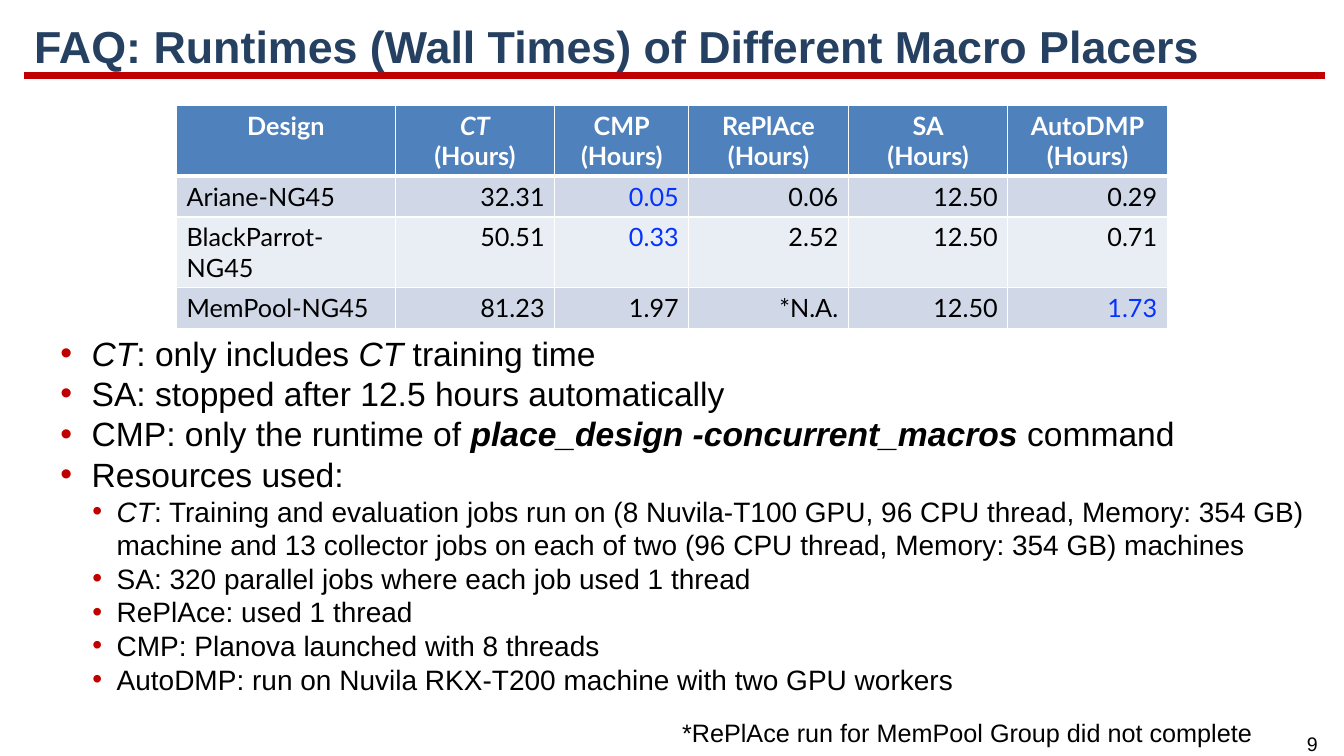
from lxml.etree import SubElement
from pptx import Presentation
from pptx.dml.color import RGBColor
from pptx.enum.shapes import MSO_CONNECTOR
from pptx.enum.text import MSO_ANCHOR, PP_ALIGN
from pptx.oxml.ns import qn
from pptx.util import Cm, Pt

RED = RGBColor(0xC0, 0x00, 0x00)
NAVY = RGBColor(0x25, 0x40, 0x61)
BLACK = RGBColor(0, 0, 0)
WHITE = RGBColor(0xFF, 0xFF, 0xFF)
BEST_BLUE = RGBColor(0x04, 0x32, 0xFF)
HEADER_FILL = RGBColor(0x4F, 0x81, 0xBD)
BAND_FILLS = (RGBColor(0xD0, 0xD8, 0xE8), RGBColor(0xE9, 0xED, 0xF4))

TITLE = "FAQ: Runtimes (Wall Times) of Different Macro Placers"
HEADERS = ["Design", "CT\n(Hours)", "CMP\n(Hours)", "RePlAce\n(Hours)",
           "SA\n(Hours)", "AutoDMP\n(Hours)"]
RUNTIMES = [
    ["Ariane-NG45", "32.31", "0.05", "0.06", "12.50", "0.29"],
    ["BlackParrot-NG45", "50.51", "0.33", "2.52", "12.50", "0.71"],
    ["MemPool-NG45", "81.23", "1.97", "*N.A.", "12.50", "1.73"],
]
BEST = {"0.05", "0.33", "1.73"}
COLUMN_WIDTHS = [5.51, 4.02, 3.38, 4.02, 4.02, 4.02]

# (level, [(text, style)]), where style holds "b" for bold and "i" for italic
BULLETS = [
    (0, [("CT", "i"), (": only includes ", ""), ("CT", "i"), (" training time", "")]),
    (0, [("SA: stopped after 12.5 hours automatically", "")]),
    (0, [("CMP: only the runtime of ", ""),
         ("place_design -concurrent_macros", "bi"), (" command", "")]),
    (0, [("Resources used:", "")]),
    (1, [("CT", "i"),
         (": Training and evaluation jobs run on (8 Nuvila-T100 GPU, 96 CPU thread, "
          "Memory: 354 GB) machine and 13 collector jobs on each of two "
          "(96 CPU thread, Memory: 354 GB) machines", "")]),
    (1, [("SA: 320 parallel jobs where each job used 1 thread", "")]),
    (1, [("RePlAce: used 1 thread", "")]),
    (1, [("CMP: Planova launched with 8 threads", "")]),
    (1, [("AutoDMP: run on Nuvila RKX-T200 machine with two GPU workers", "")]),
]
LEVELS = [  # text size, left margin, hanging indent
    (24, Cm(0.79), Cm(0.79)),
    (20, Cm(1.42), Cm(0.61)),
]
FOOTNOTE = "*RePlAce run for MemPool Group did not complete"
PAGE_NUMBER = "9"


def style_run(run, size, color=BLACK, name="Arial", bold=False, italic=False):
    font = run.font
    font.name, font.size, font.bold, font.italic = name, Pt(size), bold, italic
    font.color.rgb = color


def add_text(slide, box, text, size, color=BLACK, bold=False):
    """Add a one-line text box and return its text frame."""
    frame = slide.shapes.add_textbox(*map(Cm, box)).text_frame
    frame.word_wrap = True
    frame.text = text
    style_run(frame.paragraphs[0].runs[0], size, color, bold=bold)
    return frame


def add_bullet(paragraph, margin, hang):
    properties = paragraph._p.get_or_add_pPr()
    properties.set("marL", str(margin))
    properties.set("indent", str(-hang))
    color = SubElement(properties, qn("a:buClr"))
    SubElement(color, qn("a:srgbClr"), val=str(RED))
    SubElement(properties, qn("a:buFont"), typeface="Arial")
    SubElement(properties, qn("a:buChar"), char="•")


def add_bottom_border(cell, width):
    """Draw a white bottom border; borders must come before the cell's fill."""
    properties = cell._tc.get_or_add_tcPr()
    border = SubElement(properties, qn("a:lnB"), w=str(width))
    fill = SubElement(border, qn("a:solidFill"))
    SubElement(fill, qn("a:srgbClr"), val=str(WHITE))
    properties.insert(0, border)


def add_title(slide):
    rule = slide.shapes.add_connector(
        MSO_CONNECTOR.STRAIGHT, Cm(0.61), Cm(1.9), Cm(33.38), Cm(1.9))
    rule.line.color.rgb = RED
    rule.line.width = Pt(4.5)
    SubElement(rule._element.spPr, qn("a:effectLst"))
    title = add_text(slide, (0.61, 0.41, 32.79, 1.65), TITLE, 32, NAVY, bold=True)
    title.vertical_anchor = MSO_ANCHOR.MIDDLE
    title.paragraphs[0].line_spacing = 0.9


def add_runtimes(slide):
    rows = [HEADERS] + RUNTIMES
    table = slide.shapes.add_table(
        len(rows), len(HEADERS), Cm(4.45), Cm(2.66),
        Cm(sum(COLUMN_WIDTHS)), Cm(1.03 * len(rows))).table
    for column, width in zip(table.columns, COLUMN_WIDTHS):
        column.width = Cm(width)
    for r, row in enumerate(rows):
        for c, value in enumerate(row):
            header = r == 0
            cell = table.cell(r, c)
            cell.fill.solid()
            cell.fill.fore_color.rgb = HEADER_FILL if header else BAND_FILLS[(r - 1) % 2]
            cell.text_frame.text = value
            if header:
                color, align = WHITE, PP_ALIGN.CENTER
                add_bottom_border(cell, Pt(3))
            else:
                color = BEST_BLUE if value in BEST else BLACK
                align = PP_ALIGN.RIGHT if c else PP_ALIGN.LEFT
            for paragraph in cell.text_frame.paragraphs:
                paragraph.alignment = align
                for run in paragraph.runs:
                    style_run(run, 18, color, "Lato", header, run.text == "CT")


def add_notes_on_runs(slide):
    frame = slide.shapes.add_textbox(
        Cm(1.27), Cm(8.26), Cm(32.59), Cm(9.5)).text_frame
    frame.word_wrap = True
    for index, (level, pieces) in enumerate(BULLETS):
        paragraph = frame.add_paragraph() if index else frame.paragraphs[0]
        paragraph.level = level
        size, margin, hang = LEVELS[level]
        add_bullet(paragraph, margin, hang)
        for text, style in pieces:
            run = paragraph.add_run()
            run.text = text
            style_run(run, size, bold="b" in style, italic="i" in style)


def main():
    deck = Presentation()
    deck.slide_width, deck.slide_height = Cm(33.87), Cm(19.05)
    slide = deck.slides.add_slide(deck.slide_layouts[6])
    add_title(slide)
    add_runtimes(slide)
    add_notes_on_runs(slide)
    add_text(slide, (16.94, 17.96, 15.5, 1.02), FOOTNOTE, 18)
    number = add_text(slide, (32.51, 18.31, 1.12, 0.86), PAGE_NUMBER, 14)
    number.paragraphs[0].alignment = PP_ALIGN.CENTER
    deck.save("out.pptx")


if __name__ == "__main__":
    main()
